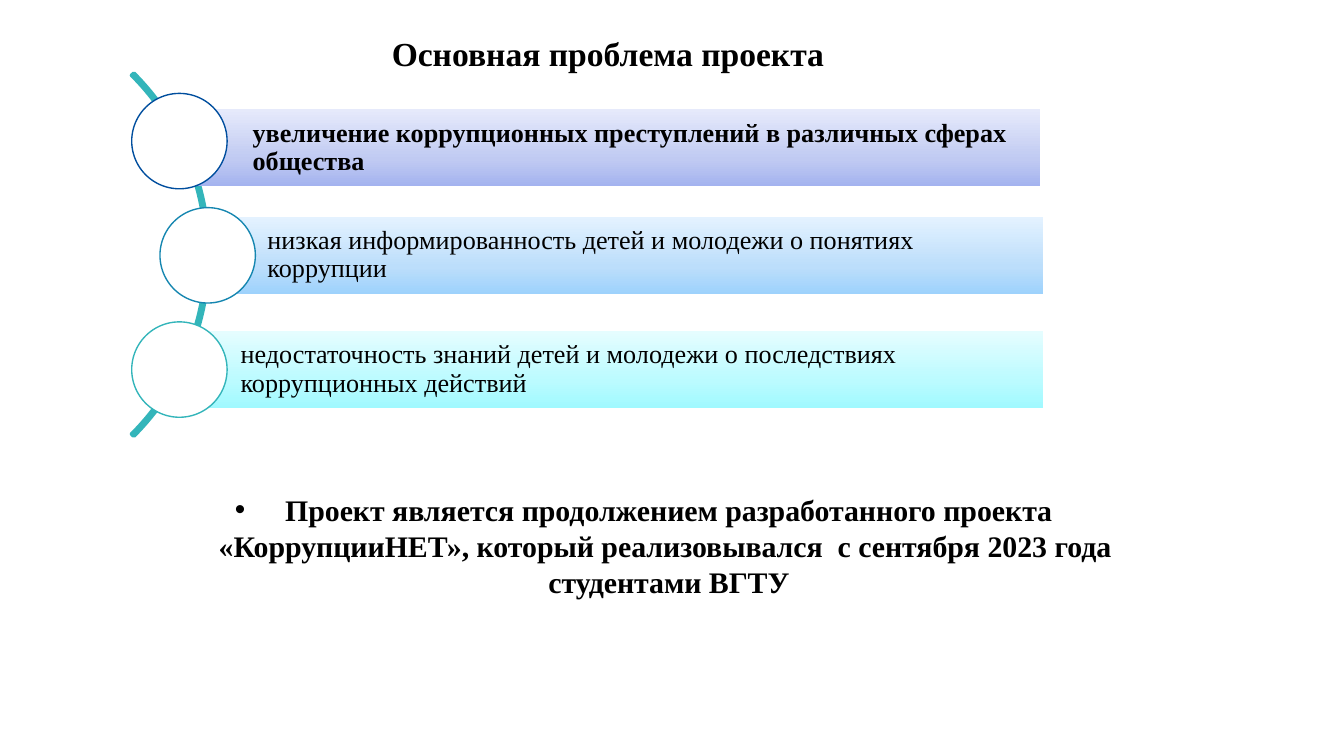
from copy import deepcopy
from lxml.etree import SubElement
from pptx import Presentation
from pptx.dml.color import RGBColor
from pptx.enum.shapes import MSO_SHAPE
from pptx.enum.text import MSO_ANCHOR, MSO_AUTO_SIZE, PP_ALIGN
from pptx.oxml.ns import qn
from pptx.util import Pt

SCALE = 4572
FONT = "Times New Roman"
TEAL = "33B5BA"
BALL = 142
ROWS = [
    (90, 24, 1262, 0, "004E9E", ("A4B3EF", "C0CAF2", "E6EAFB"), True,
     "увеличение коррупционных преступлений в различных сферах общества"),
    (112, 184, 1244, 42, "1586B0", ("9ED2FC", "BCDEFB", "E4F2FF"), False,
     "низкая информированность детей и молодежи о понятиях коррупции"),
    (72, 354, 1284, 0, TEAL, ("A0F9FF", "BBFBFF", "E5FDFF"), False,
     "недостаточность знаний детей и молодежи о последствиях коррупционных действий"),
]


def px(num):
    return num * SCALE


def hue(code):
    return RGBColor.from_string(code)


def place(shape, box):
    shape.left, shape.top, shape.width, shape.height = map(px, box)


def pad(frame, left, top, right, base):
    frame.margin_left, frame.margin_top = px(left), px(top)
    frame.margin_right, frame.margin_bottom = px(right), px(base)


def write(frame, text, size, bold, align, lines):
    frame.word_wrap = True
    frame.auto_size = MSO_AUTO_SIZE.NONE
    frame.text = text
    para = frame.paragraphs[0]
    para.alignment = align
    para.line_spacing = lines
    para.space_before = Pt(0)
    font = para.runs[0].font
    font.name, font.size, font.bold = FONT, Pt(size), bold
    font.color.rgb = hue("000000")


def draw(slide, kind, box):
    shape = slide.shapes.add_shape(kind, *map(px, box))
    shape.shadow.inherit = False
    return shape


def blend(shape, tones):
    fill = shape.fill
    fill.gradient()
    fill.gradient_angle = 90
    stops = shape._element.spPr.find(qn("a:gradFill")).find(qn("a:gsLst"))
    stops.insert(1, deepcopy(stops[0]))
    for stop, spot, tone in zip(fill.gradient_stops, (0, 0.35, 1), tones):
        stop.position = spot
        stop.color.rgb = hue(tone)


def add_title(slide, box):
    title = slide.shapes.title
    place(title, box)
    frame = title.text_frame
    pad(frame, 211, 0, 0, 0)
    frame.vertical_anchor = MSO_ANCHOR.TOP
    write(frame, "Основная проблема проекта", 18, True, PP_ALIGN.LEFT, 1.07)


def add_list(slide, left, top):
    arc = draw(slide, MSO_SHAPE.BLOCK_ARC, (left - 649, top - 142, 764, 764))
    for num, value in enumerate((189, 27, 0.006)):
        arc.adjustments[num] = value
    arc.fill.background()
    arc.line.color.rgb = hue(TEAL)
    arc.line.width = Pt(2)
    for num, (x, y, wide, shift, edge, tones, bold, text) in enumerate(ROWS):
        bar = draw(slide, MSO_SHAPE.RECTANGLE, (left + x, top + y, wide, 114))
        blend(bar, tones)
        bar.line.fill.background()
        frame = bar.text_frame
        pad(frame, 90, 8, 8, 8)
        frame.vertical_anchor = MSO_ANCHOR.MIDDLE
        write(frame, text, 14, bold, PP_ALIGN.LEFT, 0.9)
        ball = draw(slide, MSO_SHAPE.OVAL, (left + shift, top + num * 170, BALL, BALL))
        ball.fill.solid()
        ball.fill.fore_color.rgb = hue("FFFFFF")
        ball.line.color.rgb = hue(edge)
        ball.line.width = Pt(0.75)


def add_note(slide, box):
    note = slide.placeholders[1]
    place(note, box)
    frame = note.text_frame
    pad(frame, 20, 56, 20, 10)
    frame.vertical_anchor = MSO_ANCHOR.TOP
    props = frame.paragraphs[0]._p.get_or_add_pPr()
    props.set("marL", str(px(76)))
    props.set("indent", str(px(-76)))
    face = SubElement(props, qn("a:buFont"))
    face.set("typeface", "Wingdings")
    face.set("charset", "2")
    SubElement(props, qn("a:buChar")).set("char", "·")
    write(frame, "Проект является продолжением разработанного проекта «КоррупцииНЕТ», "
          "который реализовывался  с сентября 2023 года  студентами ВГТУ",
          16, True, PP_ALIGN.CENTER, 1.0)


def main():
    deck = Presentation()
    deck.slide_width, deck.slide_height = px(2000), px(1125)
    slide = deck.slides.add_slide(deck.slide_layouts[1])
    add_title(slide, (372, 45, 1628, 64))
    add_list(slide, 196, 139)
    add_note(slide, (188, 676, 1540, 228))
    deck.save("out.pptx")


if __name__ == "__main__":
    main()
